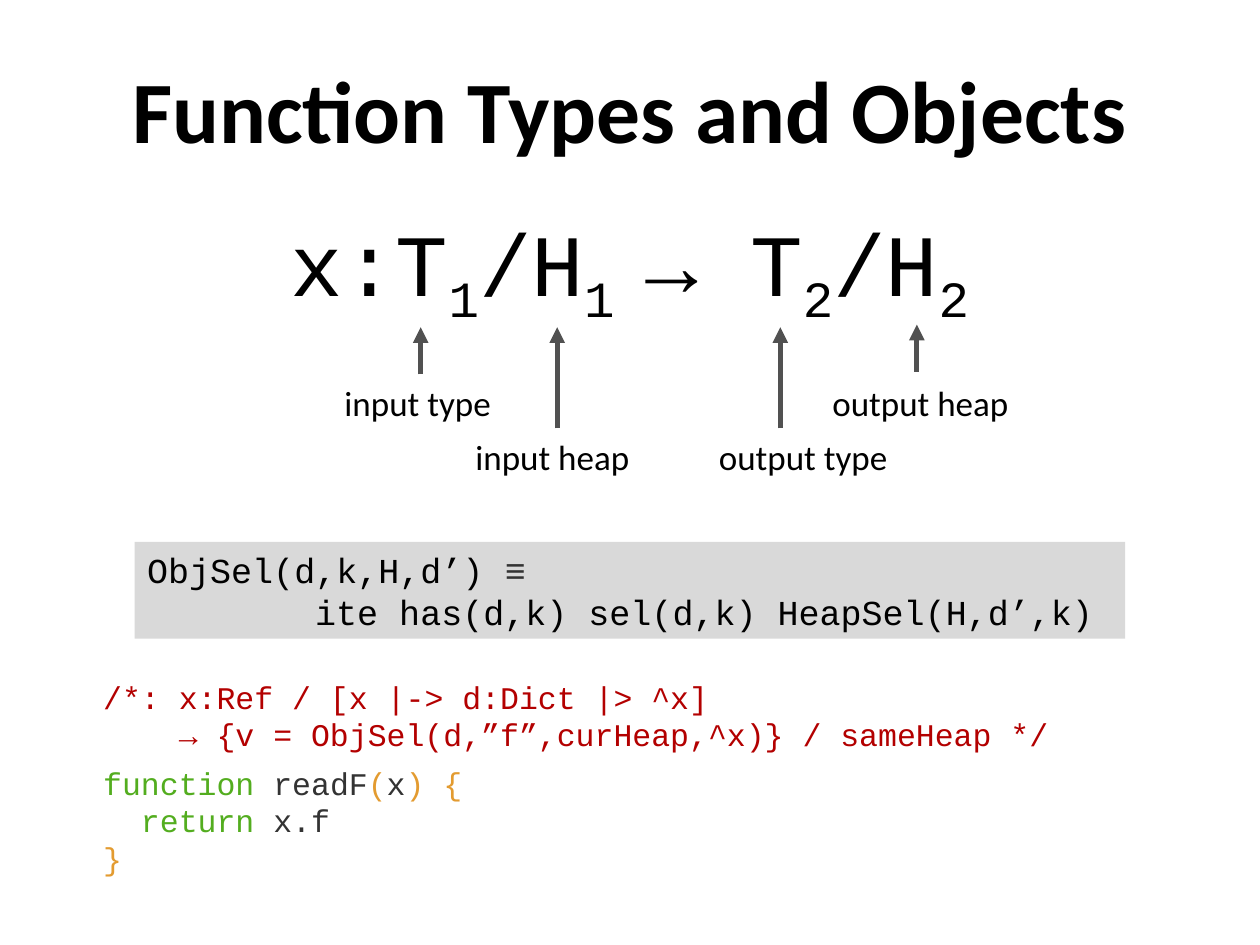
from lxml import etree
from pptx import Presentation
from pptx.dml.color import RGBColor
from pptx.enum import shapes, text
from pptx.oxml.ns import qn
from pptx.util import Pt

BLACK = RGBColor(0x00, 0x00, 0x00)
DARK = RGBColor(0x33, 0x33, 0x33)
ARROW_GRAY = RGBColor(0x51, 0x51, 0x51)
PANEL_GRAY = RGBColor(0xD9, 0xD9, 0xD9)
RED = RGBColor(0xB3, 0x00, 0x00)
GREEN = RGBColor(0x53, 0xAD, 0x1F)
ORANGE = RGBColor(0xE3, 0x9B, 0x30)
SANS, MONO = "Calibri", "Courier New"
MONO_ADVANCE = 0.6  # character width of the code font, per point of size


def add_run(paragraph, words, font, size, color=BLACK, bold=False, subscript=False):
    run = paragraph.add_run()
    run.text = words
    run.font.name = font
    run.font.size = Pt(size)
    run.font.bold = bold
    run.font.color.rgb = color
    if subscript:
        run.font._element.set("baseline", "-25000")


def prepare_frame(shape, margins=(7.2, 3.6)):
    frame = shape.text_frame
    frame.word_wrap = True
    frame.auto_size = text.MSO_AUTO_SIZE.SHAPE_TO_FIT_TEXT
    frame.vertical_anchor = text.MSO_ANCHOR.MIDDLE
    frame.margin_left = frame.margin_right = Pt(margins[0])
    frame.margin_top = frame.margin_bottom = Pt(margins[1])
    return frame


def add_text_box(slide, box, margins=(7.2, 3.6)):
    shape = slide.shapes.add_textbox(*map(Pt, box))
    return prepare_frame(shape, margins)


def write_code(frame, lines, size):
    """Each line is (indent in characters, [(words, color), ...])."""
    for number, (indent, parts) in enumerate(lines):
        paragraph = frame.add_paragraph() if number else frame.paragraphs[0]
        paragraph.alignment = text.PP_ALIGN.LEFT
        if indent:
            margin = Pt(indent * MONO_ADVANCE * size)
            paragraph._p.get_or_add_pPr().set("marL", str(margin))
        for words, color in parts:
            add_run(paragraph, words, MONO, size, color)


def place_title(slide, box):
    title = slide.shapes.title
    title.left, title.top, title.width, title.height = map(Pt, box)
    frame = title.text_frame
    frame.auto_size = text.MSO_AUTO_SIZE.NONE
    frame.vertical_anchor = text.MSO_ANCHOR.MIDDLE
    paragraph = frame.paragraphs[0]
    paragraph.alignment = text.PP_ALIGN.CENTER
    add_run(paragraph, "Function Types and Objects", SANS, 50, bold=True)


def place_formula(slide, box):
    paragraph = add_text_box(slide, box).paragraphs[0]
    paragraph.alignment = text.PP_ALIGN.CENTER
    pieces = ["x:T", "1", "/H", "1 ", "→ T", "2", "/H", "2"]
    for number, piece in enumerate(pieces):
        add_run(paragraph, piece, MONO, 50, subscript=number % 2 == 1)


def add_arrow(slide, x, start, end):
    arrow = slide.shapes.add_connector(
        shapes.MSO_CONNECTOR.STRAIGHT, Pt(x), Pt(start), Pt(x), Pt(end))
    arrow.line.color.rgb = ARROW_GRAY
    arrow.line.width = Pt(3)
    properties = arrow._element.spPr
    etree.SubElement(properties.find(qn("a:ln")), qn("a:tailEnd"), type="triangle")
    etree.SubElement(properties, qn("a:effectLst"))


def place_annotations(slide, box):
    left, top, width, height = box
    label_width, label_height = 134.6, 31.7
    upper, lower = top + 27, top + height - label_height
    # Words, label left, label top, arrow x, arrow start, arrow end
    annotations = [
        ("input type", 0, upper, 69, upper, top),
        ("input heap", 77, lower, 147, lower, top),
        ("output type", 220.3, lower, 274.5, lower, top),
        ("output heap", 287.3, upper, 352.5, upper - 1.5, top - 1.5),
    ]
    for words, label_left, label_top, x, start, end in annotations:
        label = (left + label_left, label_top, label_width, label_height)
        paragraph = add_text_box(slide, label).paragraphs[0]
        paragraph.alignment = text.PP_ALIGN.CENTER
        paragraph.space_after = Pt(18)
        add_run(paragraph, words, SANS, 20)
        add_arrow(slide, left + x, start, end)


def place_definition(slide, box):
    panel = slide.shapes.add_shape(shapes.MSO_SHAPE.RECTANGLE, *map(Pt, box))
    panel.shadow.inherit = False
    panel.fill.solid()
    panel.fill.fore_color.rgb = PANEL_GRAY
    panel.line.fill.background()
    write_code(prepare_frame(panel), [
        (0, [("ObjSel(d,k,H,d’) ", BLACK), ("≡", DARK)]),
        (8, [("ite has(d,k) sel(d,k) HeapSel(H,d’,k)", BLACK)]),
    ], 20)


def place_example(slide, box):
    frame = add_text_box(slide, box, margins=(0, 0))
    write_code(frame, [
        (0, [("/*: x:Ref / [x |-> d:Dict |> ^x]", RED)]),
        (4, [("→ {v = ObjSel(d,”f”,curHeap,^x)} / sameHeap */", RED)]),
        (0, [("function ", GREEN), ("readF", DARK), ("(", ORANGE),
             ("x", DARK), (") {", ORANGE)]),
        (2, [("return ", GREEN), ("x.f", DARK)]),
        (0, [("}", ORANGE)]),
    ], 18)
    frame.paragraphs[1].space_after = Pt(6)  # gap between type and function


def main():
    presentation = Presentation()
    presentation.slide_width, presentation.slide_height = Pt(720), Pt(540)
    slide = presentation.slides.add_slide(presentation.slide_layouts[5])
    place_definition(slide, (77, 309.6, 566, 55.4))
    place_formula(slide, (0, 119.5, 720, 67.7))
    place_title(slide, (0, 30.2, 720, 64))
    place_annotations(slide, (171.4, 187, 421.9, 89.5))
    place_example(slide, (59, 386.6, 602.6, 115.2))
    presentation.save("out.pptx")


if __name__ == "__main__":
    main()
